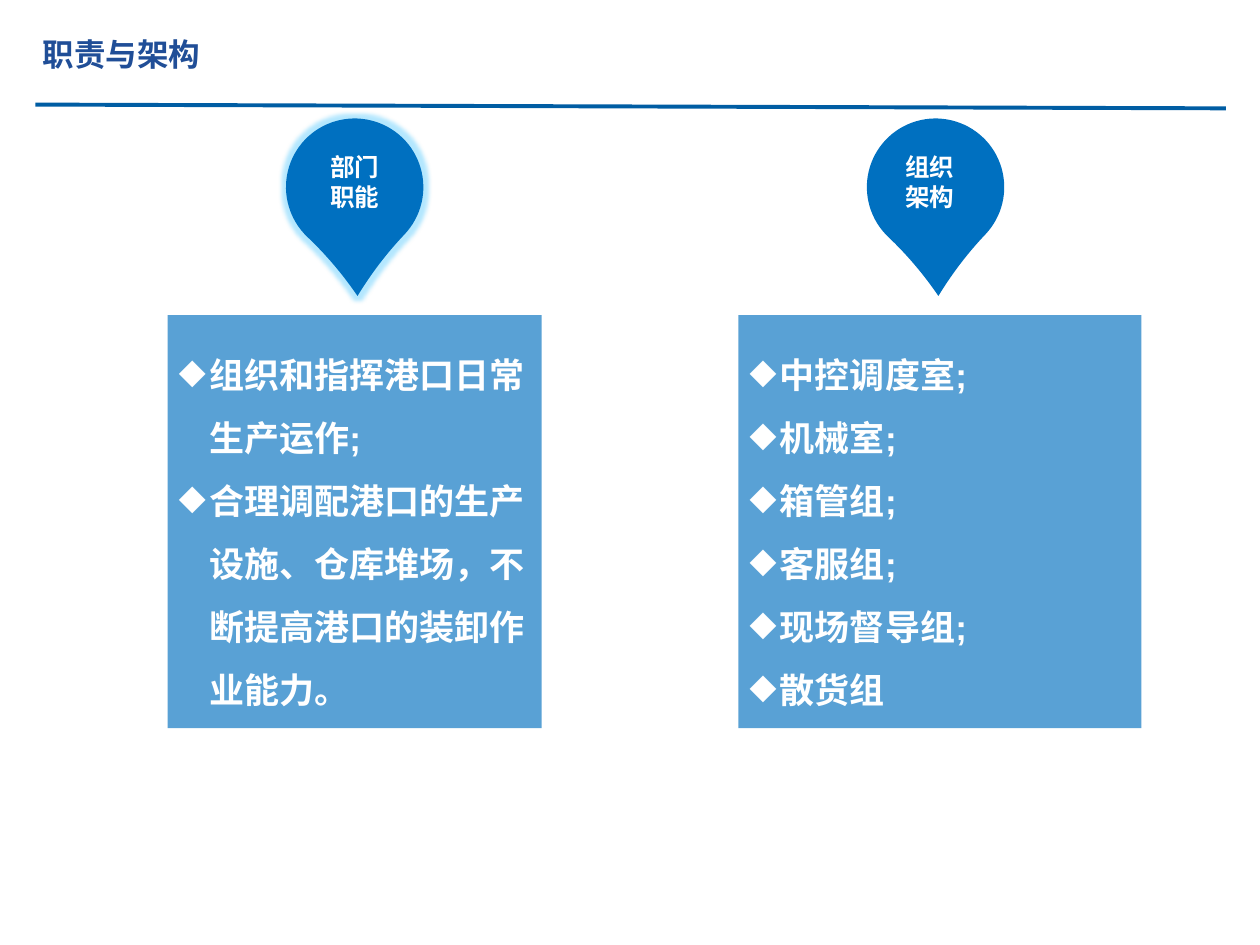
from dataclasses import dataclass

from lxml.etree import SubElement
from pptx import Presentation
from pptx.dml.color import RGBColor
from pptx.enum.shapes import MSO_CONNECTOR as CONNECTOR, MSO_SHAPE as SHAPE
from pptx.enum.text import MSO_ANCHOR as ANCHOR, PP_ALIGN as ALIGN
from pptx.oxml.ns import qn
from pptx.util import Inches, Pt


@dataclass(frozen=True)
class Theme:
    rule: str = "005DA3"
    title: str = "204E97"
    blue: str = "0070C0"
    glow: str = "00B0FF"
    white: str = "FFFFFF"
    title_size: int = 18
    label_size: int = 14
    body_size: int = 20
    title_font: str = "Noto Sans CJK JP"
    label_font: str = "Noto Sans CJK SC"
    body_font: str = "Calibri"
    mark_font: str = "Arial"
    panel_opacity: int = 65
    glow_opacity: int = 30


class SlideBuilder:
    def __init__(self, slide, theme):
        self.shapes = slide.shapes
        self.theme = theme

    def add_alpha(self, color, percent):
        SubElement(color, qn("a:alpha"), val=str(percent * 1000))

    def set_frame(self, frame, anchor):
        frame.word_wrap = True
        frame.vertical_anchor = anchor
        frame.margin_left = frame.margin_right = Inches(0.09)
        frame.margin_top = frame.margin_bottom = Inches(0.04)

    def paragraphs(self, frame, count):
        return [frame.paragraphs[0]] + [frame.add_paragraph() for _ in range(count - 1)]

    def run(self, paragraph, text, font, size, color):
        run = paragraph.add_run()
        run.text = text
        run.font.size = Pt(size)
        run.font.bold = True
        run.font.color.rgb = RGBColor.from_string(color)
        run.font.name = font
        if "CJK" in font:
            SubElement(run.font._element, qn("a:ea"), typeface=font)

    def rule(self, start, end):
        line = self.shapes.add_connector(CONNECTOR.STRAIGHT, *map(Inches, start + end))
        line.line.color.rgb = RGBColor.from_string(self.theme.rule)
        line.line.width = Pt(2.25)
        SubElement(line._element.spPr, qn("a:effectLst"))

    def text(self, box, lines, font, size, color, align=ALIGN.LEFT):
        frame = self.shapes.add_textbox(*map(Inches, box)).text_frame
        self.set_frame(frame, ANCHOR.TOP)
        for paragraph, line in zip(self.paragraphs(frame, len(lines)), lines):
            paragraph.alignment = align
            self.run(paragraph, line, font, size, color)

    def pin(self, left, top, glowing):
        group = self.shapes.add_group_shape()
        outer, inner = (left, top, 1.09, 1.09), (left + 0.1, top + 0.1, 0.9, 0.89)
        for box in (outer, inner):
            drop = group.shapes.add_shape(SHAPE.TEAR, *map(Inches, box))
            drop.adjustments[0] = 1.121
            drop.rotation = 133.5
            drop.fill.solid()
            drop.fill.fore_color.rgb = RGBColor.from_string(self.theme.blue)
            drop.line.fill.background()
            drop.shadow.inherit = False
            if glowing and box is outer:
                effects = drop._element.spPr.find(qn("a:effectLst"))
                glow = SubElement(effects, qn("a:glow"), rad=str(Pt(5)))
                color = SubElement(glow, qn("a:srgbClr"), val=self.theme.glow)
                self.add_alpha(color, self.theme.glow_opacity)

    def panel(self, box, items):
        theme = self.theme
        panel = self.shapes.add_shape(SHAPE.RECTANGLE, *map(Inches, box))
        panel.fill.solid()
        panel.fill.fore_color.rgb = RGBColor.from_string(theme.blue)
        color = panel._element.spPr.find(qn("a:solidFill"))[0]
        self.add_alpha(color, theme.panel_opacity)
        panel.line.fill.background()
        panel.shadow.inherit = False

        frame = panel.text_frame
        self.set_frame(frame, ANCHOR.MIDDLE)
        for paragraph, (item, mark) in zip(self.paragraphs(frame, len(items)), items):
            paragraph.alignment = ALIGN.LEFT
            paragraph.line_spacing = 1.5
            props = paragraph._p.get_or_add_pPr()
            props.set("marL", str(Inches(0.24)))
            props.set("indent", str(-Inches(0.24)))
            SubElement(props, qn("a:buChar"), char="◆")
            self.run(paragraph, item, theme.body_font, theme.body_size, theme.white)
            if mark:
                self.run(paragraph, mark, theme.mark_font, theme.body_size, theme.white)


def main():
    theme = Theme()
    deck = Presentation()
    deck.slide_width, deck.slide_height = Inches(10), Inches(7.5)
    builder = SlideBuilder(deck.slides.add_slide(deck.slide_layouts[6]), theme)

    # Heading
    builder.rule((0.28, 0.83), (9.73, 0.86))
    builder.text((0.25, 0.24, 6.33, 0.7), ["职责与架构"],
                 theme.title_font, theme.title_size, theme.title)

    # Columns: pin left, glow, label left and width, label, panel left and width, items
    duties = [
        ("组织和指挥港口日常生产运作", ";"),
        ("合理调配港口的生产设施、仓库堆场，不断提高港口的装卸作业能力。", ""),
    ]
    units = [
        ("中控调度室", ";"),
        ("机械室", ";"),
        ("箱管组", ";"),
        ("客服组", ";"),
        ("现场督导组", ";"),
        ("散货组", ""),
    ]
    columns = [
        (2.27, True, (2.11, 1.41), ["部门", "职能"], (1.33, 2.97), duties),
        (6.88, False, (6.64, 1.48), ["组织", "架构"], (5.86, 3.2), units),
    ]
    for pin_left, glowing, label_span, label, panel_span, items in columns:
        builder.pin(pin_left, 0.94, glowing)
        builder.text((label_span[0], 1.17, label_span[1], 0.56), label,
                     theme.label_font, theme.label_size, theme.white, ALIGN.CENTER)
        builder.panel((panel_span[0], 2.5, panel_span[1], 3.28), items)

    deck.save("out.pptx")


if __name__ == "__main__":
    main()
